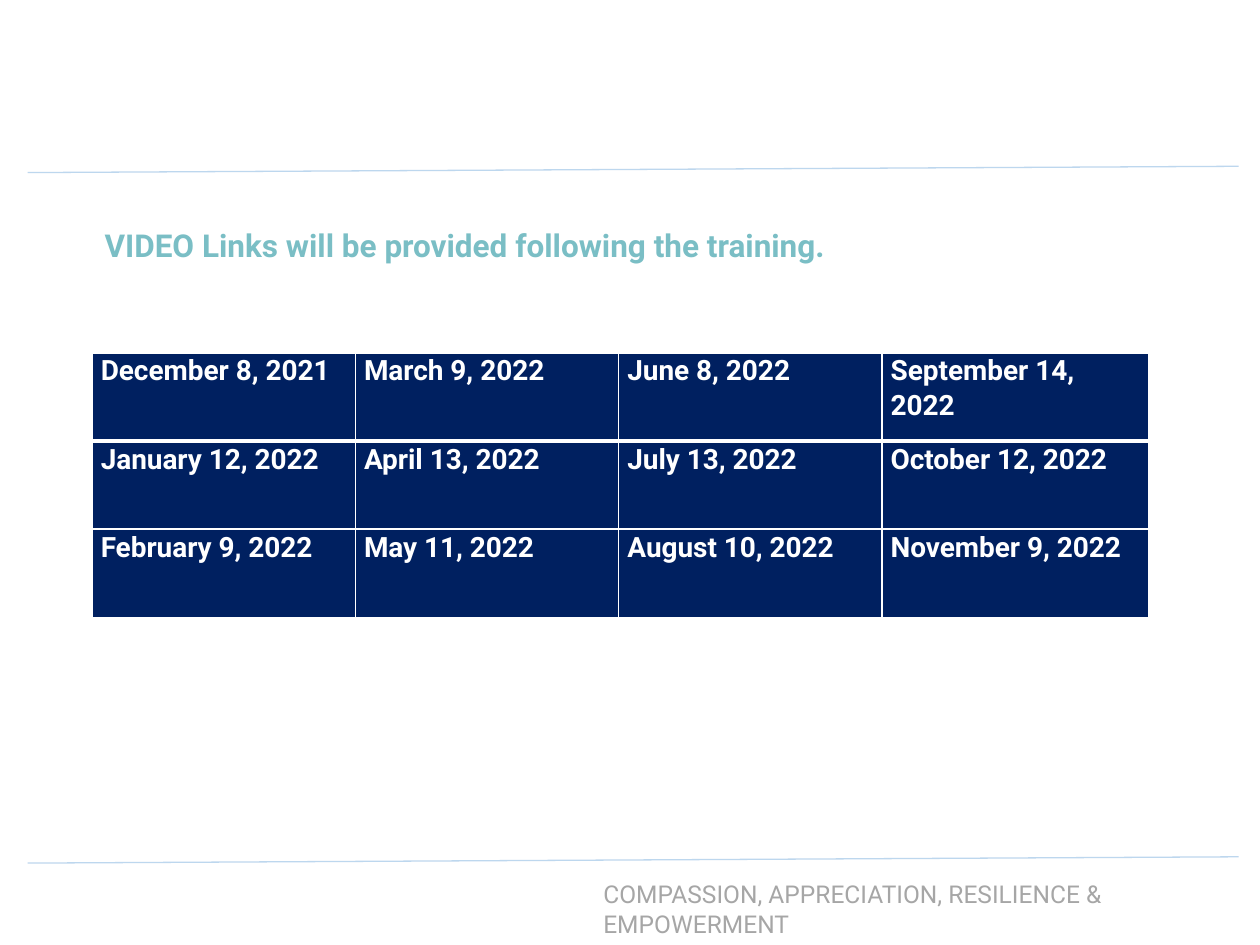
"""Build the slide of session dates."""
from lxml.etree import SubElement
from pptx import Presentation
from pptx.dml.color import RGBColor
from pptx.enum.shapes import MSO_CONNECTOR
from pptx.enum.text import MSO_ANCHOR, MSO_AUTO_SIZE, PP_ALIGN
from pptx.oxml.ns import qn
from pptx.util import Inches, Pt

NAVY = RGBColor(0x00, 0x20, 0x60)
TEAL = RGBColor(0x7A, 0xBE, 0xC5)
SKY = RGBColor(0xBD, 0xD7, 0xEE)
GREY = RGBColor(0xA6, 0xA6, 0xA6)
WHITE = RGBColor(0xFF, 0xFF, 0xFF)

DATES = [
    ["December 8, 2021", "March 9, 2022", "June 8, 2022", "September 14, 2022"],
    ["January 12, 2022", "April 13, 2022", "July 13, 2022", "October 12, 2022"],
    ["February 9, 2022", "May 11, 2022", "August 10, 2022", "November 9, 2022"],
]


def style(para, size, color, bold=False):
    form = {"name": "Roboto", "size": Pt(size), "bold": bold}
    for key, value in form.items():
        setattr(para.font, key, value)
    para.font.color.rgb = color


def border(cell, side, width):
    line = SubElement(cell._tc.get_or_add_tcPr(), qn(f"a:{side}"), w=str(Pt(width)))
    fill = SubElement(line, qn("a:solidFill"))
    SubElement(fill, qn("a:srgbClr"), val=str(WHITE))


deck = Presentation()
deck.slide_width, deck.slide_height = Inches(10), Inches(7.5)
slide = deck.slides.add_slide(deck.slide_layouts[5])
shapes = slide.shapes

title = shapes.title
place = {"left": 0.73, "top": 1.73, "width": 6.09, "height": 0.43}
for key, value in place.items():
    setattr(title, key, Inches(value))
frame = title.text_frame
frame.text = "VIDEO Links will be provided following the training."
frame.auto_size = MSO_AUTO_SIZE.NONE
frame.vertical_anchor = MSO_ANCHOR.MIDDLE
frame.paragraphs[0].alignment = PP_ALIGN.LEFT
style(frame.paragraphs[0], 18, TEAL, True)

foot = shapes.add_textbox(Inches(4.57), Inches(6.93), Inches(5.74), Inches(0.34))
frame = foot.text_frame
frame.word_wrap = True
frame.auto_size = MSO_AUTO_SIZE.SHAPE_TO_FIT_TEXT
para = frame.paragraphs[0]
para.text = "COMPASSION, APPRECIATION, RESILIENCE & EMPOWERMENT"
para._p.get_or_add_pPr().set("marL", str(Inches(0.12)))
style(para, 14, GREY)

for top in (1.32, 6.8):
    rule = shapes.add_connector(
        MSO_CONNECTOR.STRAIGHT, Inches(0.22), Inches(top + 0.05), Inches(9.83), Inches(top))
    rule.line.color.rgb = SKY
    rule.line.width = Pt(0.75)
    SubElement(rule._element.spPr, qn("a:effectLst"))

grid = shapes.add_table(3, 4, Inches(0.73), Inches(2.8), Inches(8.39), Inches(2.1)).table
for col, width in zip(grid.columns, (2.09, 2.09, 2.09, 2.12)):
    col.width = Inches(width)
pads = {"margin_left": 0.07, "margin_right": 0.07, "margin_top": 0, "margin_bottom": 0}
for r, row in enumerate(DATES):
    grid.rows[r].height = Inches(0.7)
    for c, date in enumerate(row):
        cell = grid.cell(r, c)
        for key, value in pads.items():
            setattr(cell, key, Inches(value))
        para = cell.text_frame.paragraphs[0]
        para.text = date
        para.line_spacing = 1.07
        style(para, 16, WHITE, True)
        edges = {"lnL": 1, "lnR": 1, "lnT": 3 if r == 1 else 1, "lnB": 3 if r == 0 else 1}
        for side, width in edges.items():
            border(cell, side, width)
        cell.fill.solid()
        cell.fill.fore_color.rgb = NAVY

deck.save("out.pptx")
